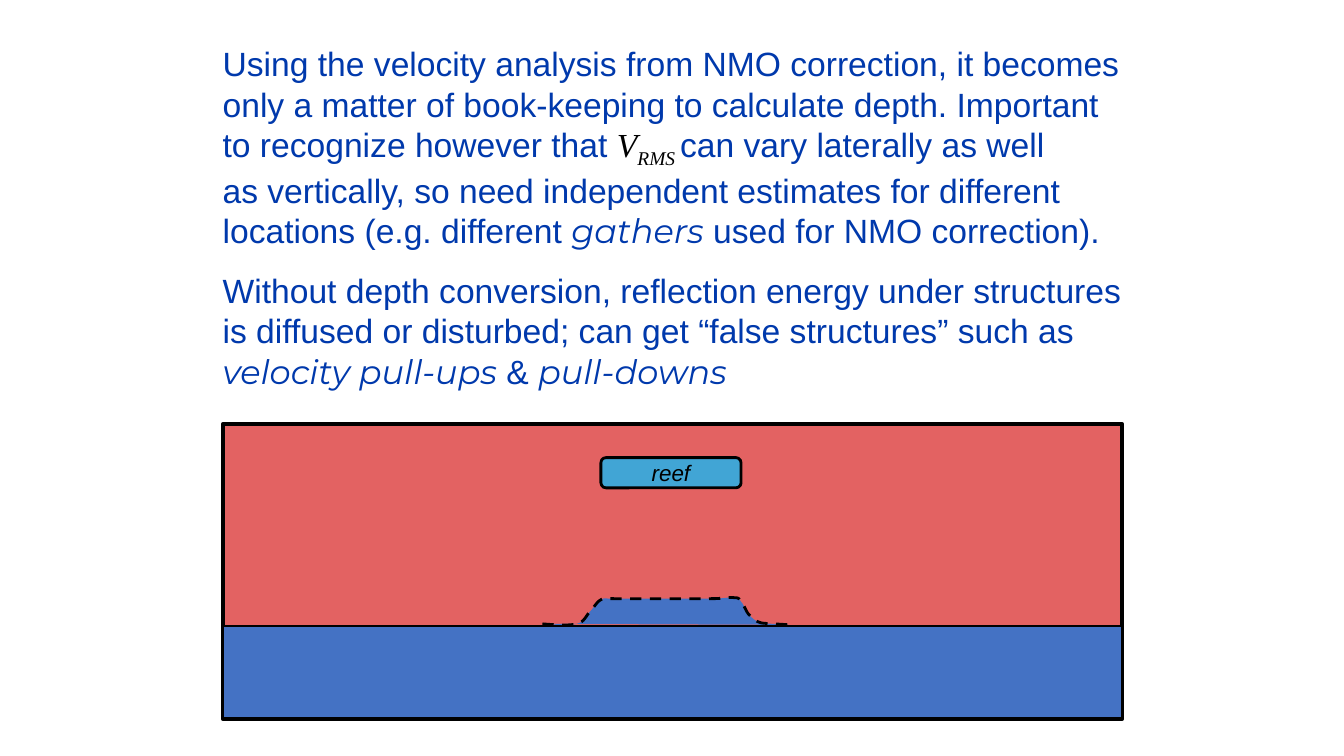
from pptx import Presentation
from pptx.dml.color import RGBColor
from pptx.enum.dml import MSO_LINE
from pptx.enum.shapes import MSO_SHAPE as Shape
from pptx.enum.text import MSO_ANCHOR as Anchor, PP_ALIGN as Align
from pptx.util import Inches, Pt

BLUE, BLACK = "0039AC", "000000"
UPPER_LAYER, LOWER_LAYER, REEF = "E36262", "4472C4", "41A5D5"

PLAIN = {}
TERM = {"font": "Montserrat", "italic": True}
SYMBOL = {"font": "Times New Roman", "italic": True, "color": BLACK}
SUBSCRIPT = {**SYMBOL, "baseline": -25000}

# Each block is a list of lines; each line is a list of (text, format) runs.
BLOCKS = [
    [
        [("Using the velocity analysis from NMO correction, it becomes", PLAIN)],
        [("only a matter of book-keeping to calculate depth. Important", PLAIN)],
        [("to recognize however that ", PLAIN), ("V", SYMBOL), ("RMS ", SUBSCRIPT),
         ("can vary laterally as well", PLAIN)],
        [("as vertically, so need independent estimates for different", PLAIN)],
        [("locations (e.g. different ", PLAIN), ("gathers", TERM),
         (" used for NMO correction).", PLAIN)],
    ],
    [
        [("Without depth conversion, reflection energy under structures", PLAIN)],
        [("is diffused or disturbed; can get “false structures” such as", PLAIN)],
        [("velocity pull-ups", TERM), (" & ", PLAIN), ("pull-downs", TERM)],
    ],
]
BLOCK_GAP = 14

LEFT, WIDTH = 2.21, 8.92
SECTION_TOP, SECTION_HEIGHT, LOWER_HEIGHT = 4.21, 2.92, 0.92

# Cubic curve: a start point, then two controls and an end for each segment.
PULL_UP = [
    (5.38, 6.19),
    (5.51, 6.2), (5.64, 6.21), (5.72, 6.19),
    (5.8, 6.17), (5.81, 6.11), (5.85, 6.07),
    (5.89, 6.03), (5.92, 5.97), (5.96, 5.95),
    (6.01, 5.93), (5.95, 5.94), (6.13, 5.94),
    (6.3, 5.94), (6.83, 5.94), (7.03, 5.94),
    (7.22, 5.94), (7.22, 5.92), (7.28, 5.93),
    (7.33, 5.93), (7.33, 5.94), (7.35, 5.97),
    (7.38, 6), (7.4, 6.07), (7.43, 6.1),
    (7.46, 6.13), (7.48, 6.16), (7.55, 6.18),
    (7.61, 6.19), (7.72, 6.19), (7.83, 6.2),
]
STEPS = 8


def rgb(value):
    return RGBColor.from_string(value)


def add_run(paragraph, text, font="Arial", size=24, color=BLUE, italic=False, baseline=0):
    run = paragraph.add_run()
    run.text = text
    run.font.name = font
    run.font.size = Pt(size)
    run.font.italic = italic
    run.font.color.rgb = rgb(color)
    if baseline:
        run.font._element.set("baseline", str(baseline))


def style(shape, fill, line_width):
    shape.shadow.inherit = False
    shape.fill.solid()
    shape.fill.fore_color.rgb = rgb(fill)
    shape.line.color.rgb = rgb(BLACK)
    shape.line.width = Pt(line_width)


def add_box(slide, kind, left, top, width, height, fill, line_width):
    shape = slide.shapes.add_shape(
        kind, Inches(left), Inches(top), Inches(width), Inches(height))
    style(shape, fill, line_width)
    return shape


def sample_curve(points):
    """Return points along the cubic segments, in EMU."""
    sampled = [points[0]]
    for first in range(0, len(points) - 1, 3):
        segment = points[first:first + 4]
        for step in range(1, STEPS + 1):
            t = step / STEPS
            weights = ((1 - t) ** 3, 3 * t * (1 - t) ** 2, 3 * t ** 2 * (1 - t), t ** 3)
            sampled.append(tuple(
                sum(weight * point[axis] for weight, point in zip(weights, segment))
                for axis in (0, 1)))
    return [(Inches(x), Inches(y)) for x, y in sampled]


def add_explanation(slide):
    box = slide.shapes.add_textbox(Inches(2.11), Inches(0.38), Inches(9.21), Inches(3.53))
    frame = box.text_frame
    frame.word_wrap = False
    paragraph = frame.paragraphs[0]
    for block_index, block in enumerate(BLOCKS):
        for line_index, line in enumerate(block):
            if block_index or line_index:
                paragraph = frame.add_paragraph()
            if block_index and not line_index:
                paragraph.space_before = Pt(BLOCK_GAP)
            for text, run_format in line:
                add_run(paragraph, text, **run_format)


def add_cross_section(slide):
    add_box(slide, Shape.RECTANGLE, LEFT, SECTION_TOP, WIDTH, SECTION_HEIGHT, UPPER_LAYER, 3)
    lower_top = SECTION_TOP + SECTION_HEIGHT - LOWER_HEIGHT
    add_box(slide, Shape.RECTANGLE, LEFT, lower_top, WIDTH, LOWER_HEIGHT, LOWER_LAYER, 2)

    reef = add_box(slide, Shape.ROUNDED_RECTANGLE, 5.96, 4.54, 1.39, 0.3, REEF, 2)
    frame = reef.text_frame
    frame.margin_top = frame.margin_bottom = 0
    frame.vertical_anchor = Anchor.MIDDLE
    paragraph = frame.paragraphs[0]
    paragraph.alignment = Align.CENTER
    add_run(paragraph, "reef", size=16, color=BLACK, italic=True)

    start, *rest = sample_curve(PULL_UP)
    builder = slide.shapes.build_freeform(*start)
    builder.add_line_segments(rest, close=False)
    pull_up = builder.convert_to_shape()
    style(pull_up, LOWER_LAYER, 2)
    pull_up.line.dash_style = MSO_LINE.DASH


def main():
    presentation = Presentation()
    presentation.slide_width = Inches(13.33)
    presentation.slide_height = Inches(7.5)
    slide = presentation.slides.add_slide(presentation.slide_layouts[6])
    add_explanation(slide)
    add_cross_section(slide)
    presentation.save("out.pptx")


if __name__ == "__main__":
    main()
